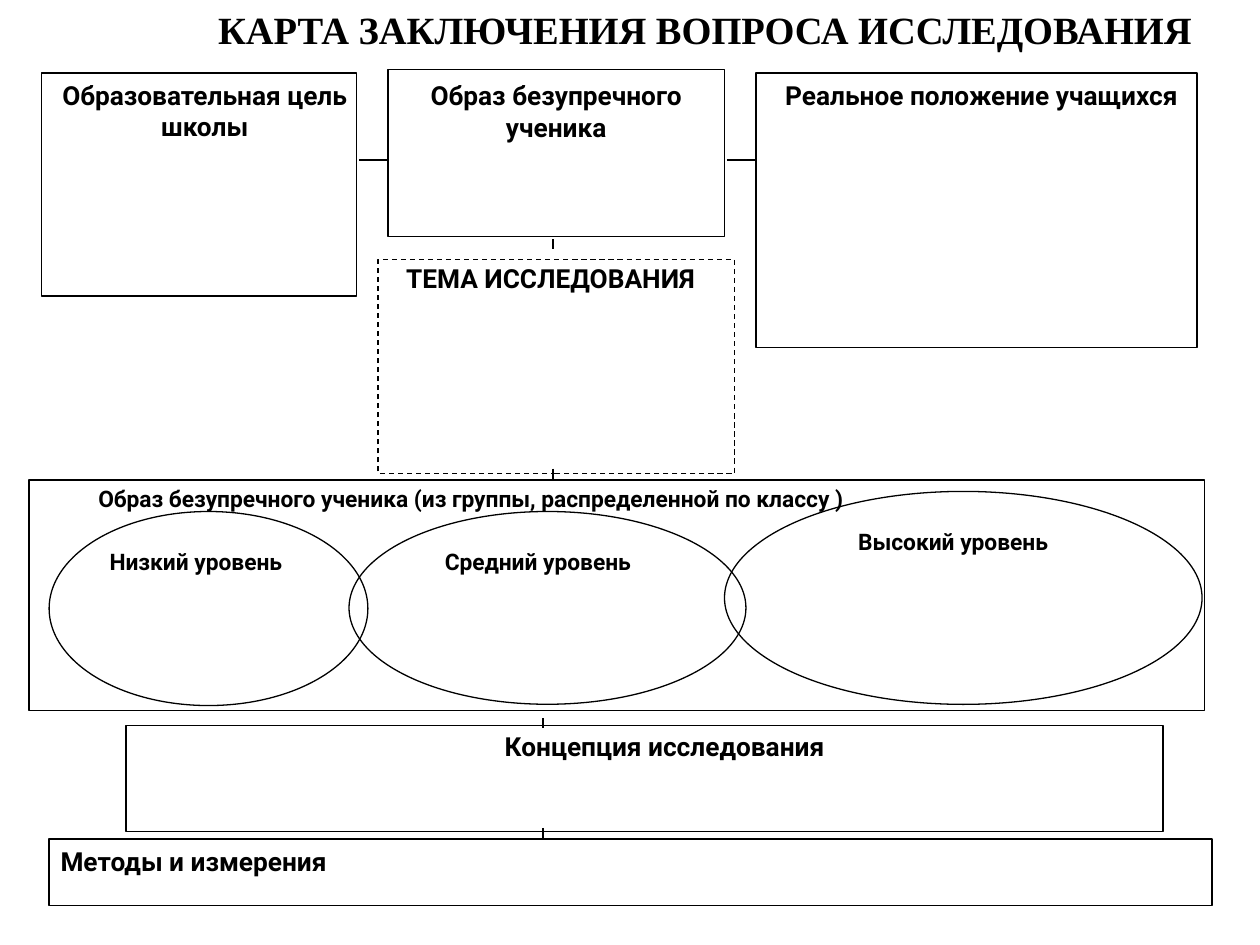
from lxml.etree import SubElement
from pptx import Presentation
from pptx.dml.color import RGBColor
from pptx.enum.dml import MSO_LINE
from pptx.enum.shapes import MSO_CONNECTOR, MSO_SHAPE
from pptx.enum.text import MSO_ANCHOR, MSO_AUTO_SIZE, PP_ALIGN
from pptx.oxml.ns import qn
from pptx.util import Inches, Pt

COLORS = {"ink": "000000", "paper": "FFFFFF"}
FONT, TITLE_FONT = "Roboto", "Times New Roman"
LEFT, CENTER = PP_ALIGN.LEFT, PP_ALIGN.CENTER

# Content: positions are (left, top, width, height) in inches
TITLE = ("КАРТА ЗАКЛЮЧЕНИЯ ВОПРОСА ИССЛЕДОВАНИЯ", (1.62, 0, 7.95, 0.46))

BOXES = [
    (0.33, 0.58, 2.5, 1.77),   # school goal
    (3.08, 0.55, 2.67, 1.33),  # ideal pupil
    (6, 0.58, 3.5, 2.18),      # real situation
    (0.23, 3.81, 9.33, 1.83),  # levels
    (1, 5.76, 8.23, 0.84),     # concept
    (0.39, 6.66, 9.23, 0.53),  # methods
]
THEME_BOX = (3, 2.06, 2.83, 1.7)
LEVEL_OVALS = [
    (0.39, 4.06, 2.53, 1.54),
    (2.77, 4.06, 3.15, 1.53),
    (5.75, 3.9, 3.79, 1.69),
]

LABELS = [  # text, position, size, alignment
    ("Образовательная цель школы", (0.33, 0.58, 2.59, 0.6), 15, CENTER),
    ("Образ безупречного ученика", (3.08, 0.58, 2.67, 1.08), 15, CENTER),
    ("Реальное положение учащихся", (6, 0.58, 3.58, 0.34), 15, CENTER),
    ("ТЕМА ИССЛЕДОВАНИЯ", (3.08, 2.03, 2.58, 0.6), 15, CENTER),
    ("Образ безупречного ученика (из группы, распределенной по классу )",
     (0.69, 3.8, 6.51, 0.31), 13, LEFT),
    ("Низкий уровень", (0.78, 4.3, 1.67, 0.31), 13, LEFT),
    ("Средний уровень", (3.44, 4.3, 2.25, 0.31), 13, LEFT),
    ("Высокий уровень", (6.72, 4.14, 2.18, 0.31), 13, LEFT),
    ("Концепция исследования", (1.08, 5.75, 8.39, 0.34), 15, CENTER),
    ("Методы и измерения", (0.39, 6.66, 9.61, 0.34), 15, LEFT),
]

ACROSS = [(2.85, 1.27), (5.77, 1.27)]
DOWN = [(4.39, 1.9), (4.39, 3.72), (4.31, 5.7), (4.31, 6.57)]
ACROSS_LENGTH, DOWN_LENGTH = 0.23, 0.08


def rgb(name):
    return RGBColor.from_string(COLORS[name])


def set_line(line):
    line.color.rgb = rgb("ink")
    line.width = Pt(0.75)


def add_outline(s, kind, box):
    sp = s.shapes.add_shape(kind, *map(Inches, box))
    sp.shadow.inherit = False
    sp.fill.background()
    set_line(sp.line)
    return sp


def write(sp, text, size, font, align):
    tf = sp.text_frame
    tf.text = text
    tf.word_wrap = True
    tf.auto_size = MSO_AUTO_SIZE.SHAPE_TO_FIT_TEXT
    tf.vertical_anchor = MSO_ANCHOR.TOP
    tf.margin_left = tf.margin_right = Inches(0.09)
    tf.margin_top = tf.margin_bottom = Inches(0.05)
    p = tf.paragraphs[0]
    p.alignment = align
    p.space_before = Pt(0)
    r = p.runs[0]
    r.font.name, r.font.size, r.font.bold = font, Pt(size), True
    r.font.color.rgb = rgb("ink")


def add_link(s, x, y, dx, dy):
    link = s.shapes.add_connector(
        MSO_CONNECTOR.STRAIGHT, *map(Inches, (x, y, x + dx, y + dy)))
    set_line(link.line)
    SubElement(link._element.spPr, qn("a:effectLst"))


def main():
    prs = Presentation()
    prs.slide_width, prs.slide_height = Inches(10), Inches(7.5)
    s = prs.slides.add_slide(prs.slide_layouts[5])
    s.background.fill.solid()
    s.background.fill.fore_color.rgb = rgb("paper")

    # Title
    text, box = TITLE
    title = s.shapes.title
    title.left, title.top, title.width, title.height = map(Inches, box)
    write(title, text, 22, TITLE_FONT, CENTER)

    # Boxes and level ovals
    for box in BOXES:
        add_outline(s, MSO_SHAPE.RECTANGLE, box)
    theme = add_outline(s, MSO_SHAPE.RECTANGLE, THEME_BOX)
    theme.line.dash_style = MSO_LINE.DASH
    for box in LEVEL_OVALS:
        add_outline(s, MSO_SHAPE.OVAL, box)

    # Labels
    for text, box, size, align in LABELS:
        write(s.shapes.add_textbox(*map(Inches, box)), text, size, FONT, align)

    # Links between boxes
    for x, y in ACROSS:
        add_link(s, x, y, ACROSS_LENGTH, 0)
    for x, y in DOWN:
        add_link(s, x, y, 0, DOWN_LENGTH)

    prs.save("out.pptx")


if __name__ == "__main__":
    main()
